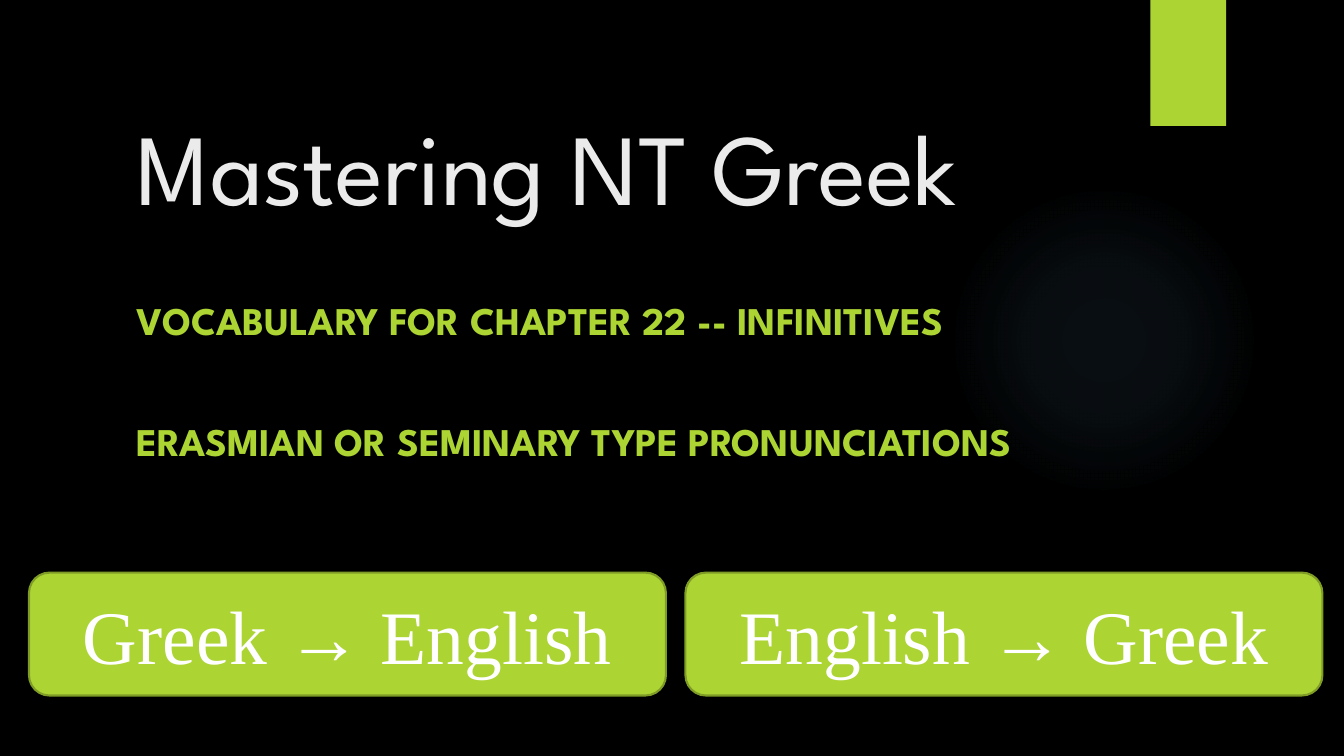
from pptx import Presentation
from pptx.dml.color import RGBColor
from pptx.enum.shapes import MSO_SHAPE
from pptx.enum.text import MSO_ANCHOR, PP_ALIGN
from pptx.oxml import parse_xml
from pptx.oxml.ns import nsdecls
from pptx.util import Pt

ELLIPSE = MSO_SHAPE.OVAL
RECTANGLE = MSO_SHAPE.RECTANGLE
ROUNDED = MSO_SHAPE.ROUNDED_RECTANGLE
TOP, MIDDLE, BOTTOM = MSO_ANCHOR.TOP, MSO_ANCHOR.MIDDLE, MSO_ANCHOR.BOTTOM
CENTER = PP_ALIGN.CENTER

LIME, OLIVE = "ACD433", "7F9D26"
HEADING_FONT, BUTTON_FONT = "League Spartan", "Times New Roman"
GLOW_STOPS = [(0, 7), (36, 6), (69, 0)]


def color(hex_code):
    return RGBColor.from_string(hex_code)


def add_panel(page, kind, left, top, width, height, fill=None, line=None):
    panel = page.shapes.add_shape(kind, Pt(left), Pt(top), Pt(width), Pt(height))
    panel.shadow.inherit = False
    if fill:
        panel.fill.solid()
        panel.fill.fore_color.rgb = color(fill)
    if line:
        panel.line.color.rgb = color(line)
        panel.line.width = Pt(1.5)
    else:
        panel.line.fill.background()
    return panel


def add_glow(page, left, top, size, hex_code):
    glow = add_panel(page, ELLIPSE, left, top, size, size)
    stops = "".join(
        f'<a:gs pos="{place * 1000}"><a:srgbClr val="{hex_code}">'
        f'<a:alpha val="{opacity * 1000}"/></a:srgbClr></a:gs>'
        for place, opacity in GLOW_STOPS
    )
    gradient = parse_xml(
        f'<a:gradFill {nsdecls("a")} rotWithShape="1"><a:gsLst>{stops}</a:gsLst>'
        '<a:path path="circle"><a:fillToRect l="50000" t="50000" r="50000" b="50000"/>'
        "</a:path></a:gradFill>"
    )
    glow.element.spPr.find("{*}prstGeom").addnext(gradient)


def write(box, lines, font, size, hex_code, anchor, bold=False):
    frame = box.text_frame
    frame.word_wrap = True
    frame.vertical_anchor = anchor
    frame.text = "\n".join(lines)
    for para in frame.paragraphs:
        for span in para.runs:
            span.font.name = font
            span.font.size = Pt(size)
            span.font.bold = bold
            span.font.color.rgb = color(hex_code)
    return frame.paragraphs


def add_text(page, left, top, width, height, *style, **options):
    box = page.shapes.add_textbox(Pt(left), Pt(top), Pt(width), Pt(height))
    return write(box, *style, **options)


def add_button(page, left, label):
    button = add_panel(page, ROUNDED, left, 409, 455, 87.8, LIME, OLIVE)
    for para in write(button, [label], BUTTON_FONT, 54, "FFFFFF", MIDDLE):
        para.alignment = CENTER


def main():
    deck = Presentation()
    deck.slide_width, deck.slide_height = Pt(960), Pt(540)
    page = deck.slides.add_slide(deck.slide_layouts[6])
    page.background.fill.solid()
    page.background.fill.fore_color.rgb = color("000000")

    add_glow(page, 677.5, 131.8, 221.8, "7AC4F0")
    add_panel(page, RECTANGLE, 821.8, 0, 54, 90, LIME)
    add_text(page, 90.7, 50.4, 722.9, 114.5, ["Mastering NT Greek"],
             HEADING_FONT, 72, "EBEBEB", BOTTOM)
    subtitle = [
        "VOCABULARY FOR CHAPTER 22 -- INFINITIVES",
        "ERASMIAN OR SEMINARY TYPE PRONUNCIATIONS",
    ]
    paras = add_text(page, 90.7, 207.4, 751, 193.7, subtitle,
                     HEADING_FONT, 28, LIME, TOP, bold=True)
    for para in paras:
        para.line_spacing = Pt(34)
    paras[1].space_before = Pt(53)

    for column, label in enumerate(["Greek → English", "English → Greek"]):
        add_button(page, 20.7 + column * 468.9, label)

    deck.save("out.pptx")


if __name__ == "__main__":
    main()
